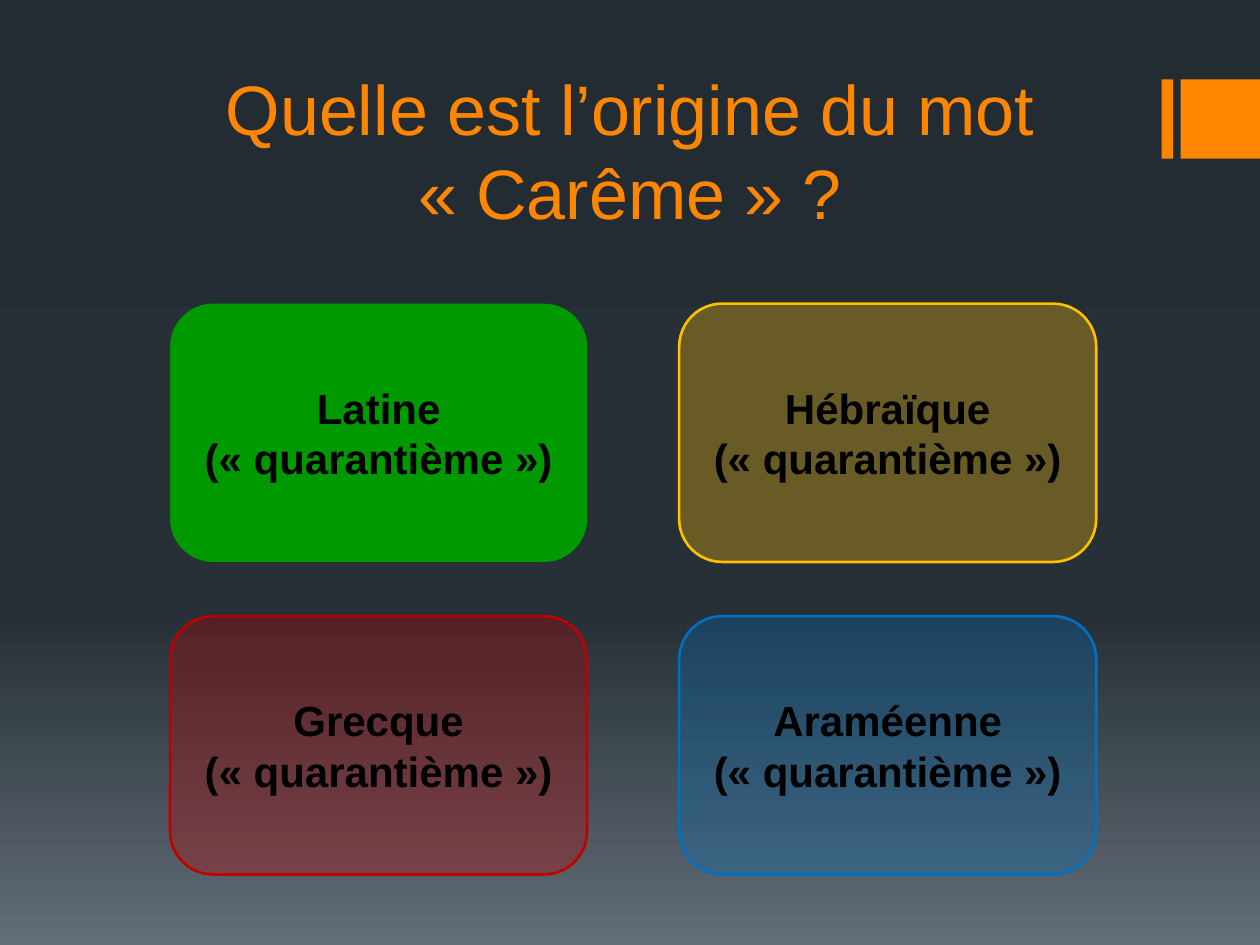
from copy import deepcopy
from dataclasses import dataclass

from lxml.etree import SubElement
from pptx import Presentation
from pptx.dml.color import RGBColor as Rgb
from pptx.enum.shapes import MSO_SHAPE as Shape
from pptx.enum.text import MSO_ANCHOR as Anchor, PP_ALIGN as Align
from pptx.oxml.ns import qn
from pptx.shapes.autoshape import Shape as Auto
from pptx.slide import Slide
from pptx.text.text import TextFrame
from pptx.util import Inches, Pt


@dataclass(frozen=True)
class Theme:
    font: str = "Arial"
    accent: str = "FF8600"
    ink: str = "000000"
    right: str = "009900"
    back: tuple = ((0, "242C33"), (0.65, "273037"), (1, "636D76"))
    title: int = 40
    body: int = 24
    line: float = 1.5
    alpha: int = 30


@dataclass(frozen=True)
class Box:
    x: float
    y: float
    w: float
    h: float

    def emu(self) -> list:
        return [Inches(v) for v in (self.x, self.y, self.w, self.h)]


@dataclass(frozen=True)
class Card:
    name: str
    color: str
    solid: bool = False


THEME = Theme()
HARD = chr(160)  # no-break space
CARDS = (
    Card("Latine", THEME.right, solid=True),
    Card("Hébraïque", "FFC000"),
    Card("Grecque", "C00000"),
    Card("Araméenne", "0070C0"),
)


def quote(word: str) -> str:
    """Put a word in French quotes that stay on its line."""
    return HARD.join(("«", word, "»"))


def paint(slide: Slide) -> None:
    """Fill the background with a gradient from top to bottom."""
    fill = slide.background.fill
    fill.gradient()
    fill.gradient_angle = 270
    first = fill.gradient_stops[0]._gs
    first.addnext(deepcopy(first))
    for stop, (pos, color) in zip(fill.gradient_stops, THEME.back):
        stop.position = pos
        stop.color.rgb = Rgb.from_string(color)


def write(frame: TextFrame, text: str, size: int, color: str, bold: bool) -> None:
    frame.word_wrap = True
    frame.vertical_anchor = Anchor.MIDDLE
    para = frame.paragraphs[0]
    para.alignment = Align.CENTER
    run = para.add_run()
    run.text = text
    font = run.font
    font.name, font.size, font.bold = THEME.font, Pt(size), bold
    font.color.rgb = Rgb.from_string(color)


def block(slide: Slide, kind: Shape, box: Box, color: str) -> Auto:
    shape = slide.shapes.add_shape(kind, *box.emu())
    shape.shadow.inherit = False
    shape.fill.solid()
    shape.fill.fore_color.rgb = Rgb.from_string(color)
    shape.line.fill.background()
    return shape


def answer(slide: Slide, card: Card, box: Box) -> None:
    shape = block(slide, Shape.ROUNDED_RECTANGLE, box, card.color)
    if not card.solid:
        tint = shape._element.spPr.find(qn("a:solidFill")).find(qn("a:srgbClr"))
        SubElement(tint, qn("a:alpha")).set("val", str(THEME.alpha * 1000))
        shape.line.color.rgb = Rgb.from_string(card.color)
        shape.line.width = Pt(THEME.line)
    text = f"{card.name} ({quote('quarantième')})"
    write(shape.text_frame, text, THEME.body, THEME.ink, True)


def main() -> None:
    deck = Presentation()
    deck.slide_width, deck.slide_height = Inches(10), Inches(7.5)
    slide = deck.slides.add_slide(deck.slide_layouts[6])
    paint(slide)

    # Accent bars at the right edge
    for x, w in ((9.22, 0.09), (9.37, 0.63)):
        block(slide, Shape.RECTANGLE, Box(x, 0.63, w, 0.63), THEME.accent)

    # Question
    title = slide.shapes.add_textbox(*Box(1, 0.36, 8, 1.65).emu())
    text = f"Quelle est l’origine du mot {quote('Carême')} ?"
    write(title.text_frame, text, THEME.title, THEME.accent, False)

    # Answers in a two by two grid
    for i, card in enumerate(CARDS):
        row, col = divmod(i, 2)
        answer(slide, card, Box(1.35 + col * 4.04, 2.41 + row * 2.48, 3.31, 2.05))

    deck.save("out.pptx")


if __name__ == "__main__":
    main()
